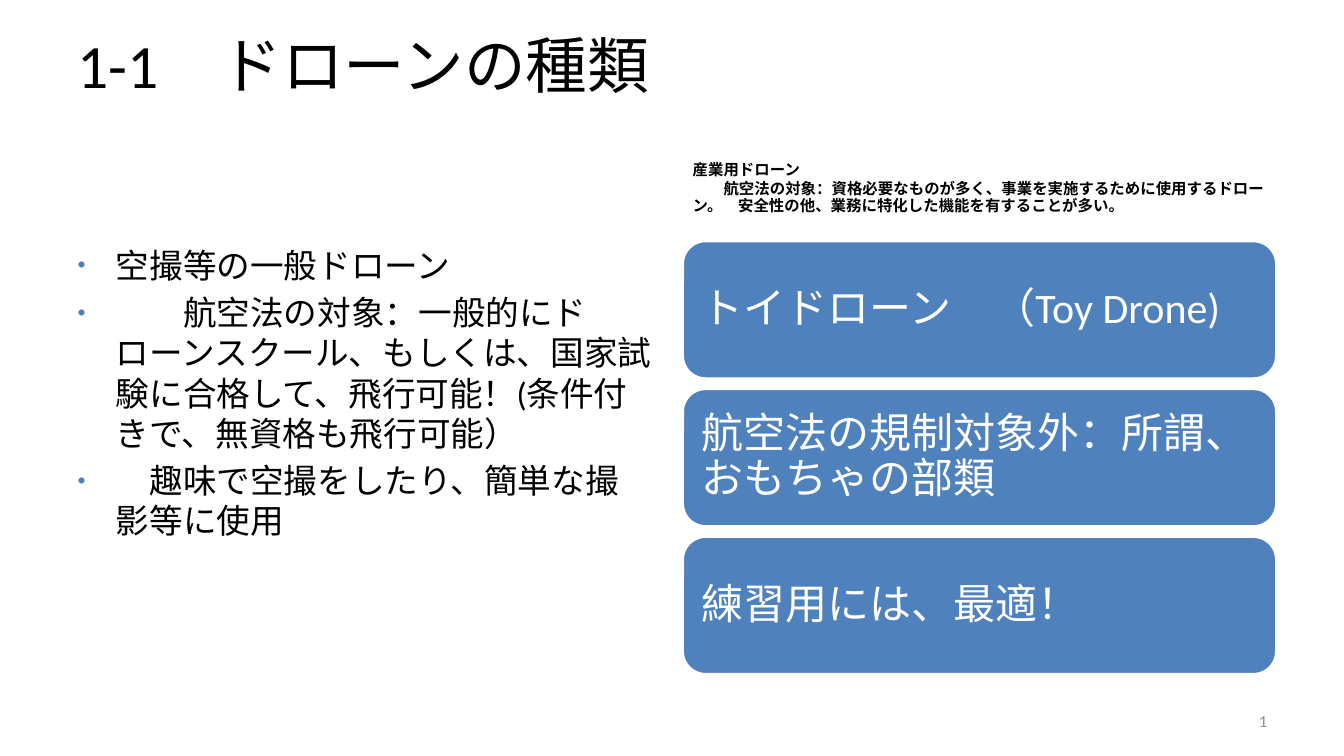
from lxml import etree
from pptx import Presentation
from pptx.dml.color import RGBColor
from pptx.enum import shapes, text
from pptx.oxml import ns
from pptx.util import Inches, Pt

COLORS = {"text": "000000", "blue": "4F81BD", "white": "FFFFFF", "grey": "8C8C8C"}
FONT = "Calibri"
TITLE = "1-1　ドローンの種類"
GENERAL = [
    "空撮等の一般ドローン",
    "　　航空法の対象：一般的にドローンスクール、もしくは、国家試験に合格して、"
    "飛行可能！(条件付きで、無資格も飛行可能）",
    "　趣味で空撮をしたり、簡単な撮影等に使用",
]
INDUSTRIAL = [
    "産業用ドローン",
    "　　航空法の対象：資格必要なものが多く、事業を実施するために使用するドローン。"
    "　安全性の他、業務に特化した機能を有することが多い。",
]
TOY = ["トイドローン　（Toy Drone)", "航空法の規制対象外：所謂、おもちゃの部類", "練習用には、最適！"]


def color(name):
    """Return a palette colour."""
    return RGBColor.from_string(COLORS[name])


def place(sp, box):
    """Move a shape to a box of left, top, width and height in inches."""
    sp.left, sp.top, sp.width, sp.height = map(Inches, box)


def set_frame(sp, anchor, insets=(0.1, 0.05, 0.1, 0.05)):
    """Set wrapping, anchor and insets, and return the text frame."""
    tf = sp.text_frame
    tf.word_wrap = True
    tf.auto_size = text.MSO_AUTO_SIZE.NONE
    tf.vertical_anchor = anchor
    tf.margin_left, tf.margin_top, tf.margin_right, tf.margin_bottom = map(Inches, insets)
    return tf


def write(tf, lines, size, ink="text", bold=False, spacing=0.9, gap=0):
    """Fill a frame with left-aligned paragraphs and format their runs."""
    tf.text = "\n".join(lines)
    for i, p in enumerate(tf.paragraphs):
        p.alignment = text.PP_ALIGN.LEFT
        p.line_spacing = spacing
        p.space_before = Pt(gap if i else 0)
        p.space_after = Pt(0)
        for r in p.runs:
            r.font.name, r.font.size, r.font.bold = FONT, Pt(size), bold
            r.font.color.rgb = color(ink)


def add_bullet(p):
    """Give a paragraph a small blue bullet and a hanging indent."""
    pPr = p._p.get_or_add_pPr()
    pPr.set("marL", str(Inches(0.38)))
    pPr.set("indent", str(Inches(-0.38)))
    clr = etree.SubElement(pPr, ns.qn("a:buClr"))
    etree.SubElement(clr, ns.qn("a:srgbClr"), val=COLORS["blue"])
    etree.SubElement(pPr, ns.qn("a:buSzPct"), val="68000")
    etree.SubElement(pPr, ns.qn("a:buFont"), typeface="Arial")
    etree.SubElement(pPr, ns.qn("a:buChar"), char="•")


def fill_title(sp, box):
    """Place the slide title."""
    place(sp, box)
    write(set_frame(sp, text.MSO_ANCHOR.TOP), [TITLE], 44)


def fill_general(sp, box):
    """Place the bulleted list on general drones."""
    place(sp, box)
    tf = set_frame(sp, text.MSO_ANCHOR.TOP)
    write(tf, GENERAL, 24, spacing=1.0, gap=4.8)
    for p in tf.paragraphs:
        add_bullet(p)


def fill_industrial(sp, box):
    """Place the bold note on industrial drones."""
    place(sp, box)
    tf = set_frame(sp, text.MSO_ANCHOR.BOTTOM, (0.1, 0.05, 0.1, 0.25))
    write(tf, INDUSTRIAL, 11, bold=True, gap=2.2)


def add_toy_blocks(s, box, gap=0.1):
    """Stack the toy drone blocks evenly in the box."""
    left, top, width, height = box
    block = (height - gap * (len(TOY) - 1)) / len(TOY)
    for i, line in enumerate(TOY):
        y = top + i * (block + gap)
        sp = s.shapes.add_shape(shapes.MSO_SHAPE.ROUNDED_RECTANGLE,
                                *map(Inches, (left, y, width, block)))
        sp.shadow.inherit = False
        sp.fill.solid()
        sp.fill.fore_color.rgb = color("blue")
        sp.line.color.rgb = color("white")
        sp.line.width = Pt(2)
        tf = set_frame(sp, text.MSO_ANCHOR.MIDDLE, (0.12,) * 4)
        write(tf, [line], 30, "white")


def add_slide_number(s, box):
    """Add the slide number as a field."""
    sp = s.shapes.add_textbox(*map(Inches, box))
    p = set_frame(sp, text.MSO_ANCHOR.MIDDLE).paragraphs[0]
    p.alignment = text.PP_ALIGN.RIGHT
    r = p.add_run()
    r.text = "5"
    r.font.name, r.font.size = FONT, Pt(12)
    r.font.color.rgb = color("grey")
    fld = etree.SubElement(p._p, ns.qn("a:fld"), type="slidenum",
                           id="{B6F15528-21DE-4FAA-801E-634DDDAF4B2B}")
    fld.extend(list(r._r))
    p._p.remove(r._r)


def build_slide(prs):
    """Build the drone types slide on the comparison layout."""
    s = prs.slides.add_slide(prs.slide_layouts[4])
    parts = {sp.placeholder_format.idx: sp for sp in s.placeholders}
    fill_title(parts[0], (0.67, 0.3, 12, 0.77))
    fill_general(parts[2], (0.67, 2.38, 5.89, 4.32))
    fill_industrial(parts[3], (6.77, 1.68, 5.89, 0.7))
    for idx in (1, 4):
        parts[idx].element.getparent().remove(parts[idx].element)
    add_toy_blocks(s, (6.77, 2.39, 5.89, 4.3))
    add_slide_number(s, (9.56, 6.95, 3.11, 0.4))


def main():
    """Create and save the presentation."""
    prs = Presentation()
    prs.slide_width, prs.slide_height = Inches(13.33), Inches(7.5)
    build_slide(prs)
    prs.save("out.pptx")


if __name__ == "__main__":
    main()
